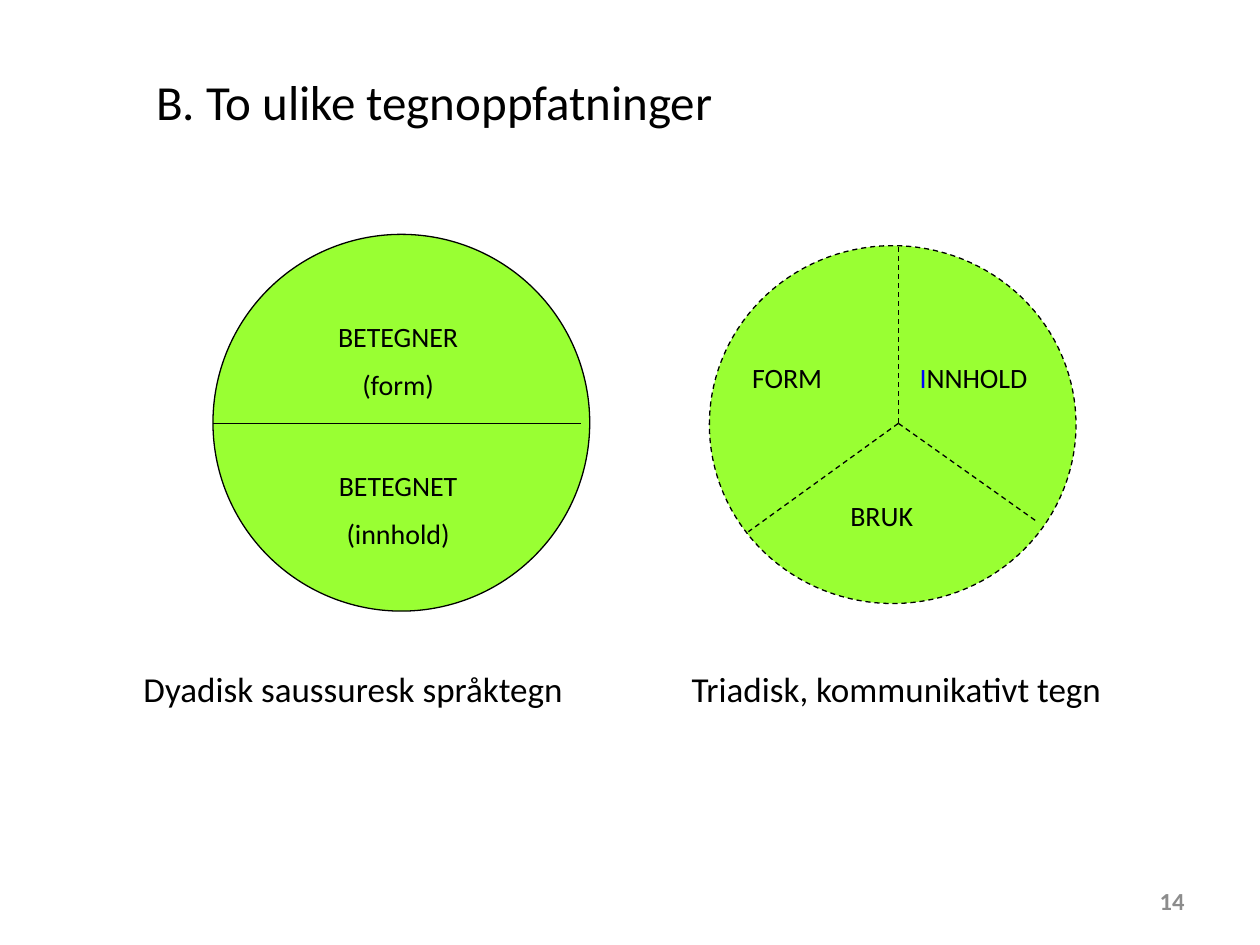
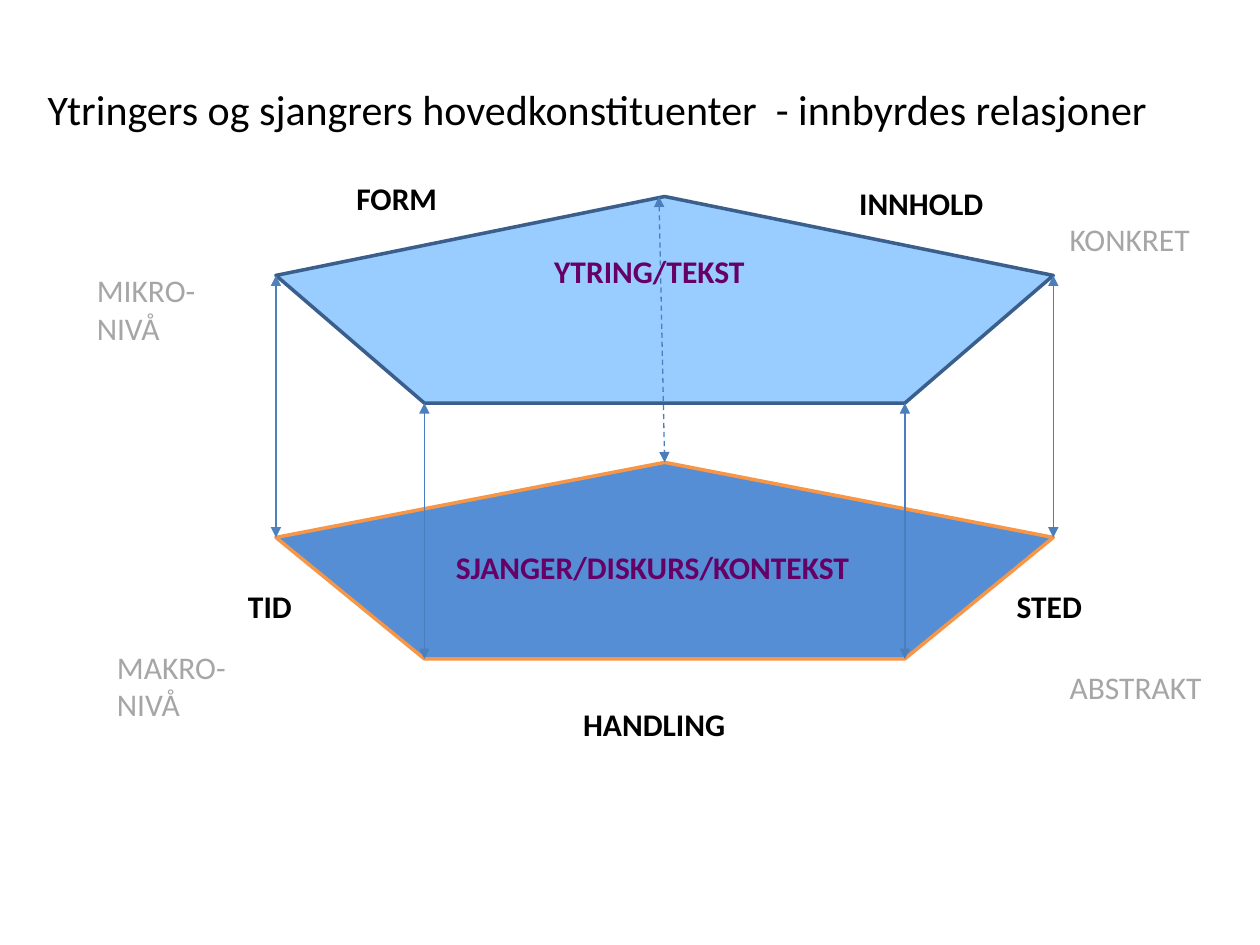
from lxml.etree import SubElement
from pptx import Presentation
from pptx.dml.color import RGBColor
from pptx.enum.dml import MSO_LINE_DASH_STYLE as DASH
from pptx.enum.shapes import MSO_CONNECTOR, MSO_SHAPE
from pptx.enum.text import MSO_ANCHOR, PP_ALIGN
from pptx.oxml.ns import qn
from pptx.util import Inches, Pt

FONT = "Calibri"
BLACK = RGBColor(0x00, 0x00, 0x00)
LIME = RGBColor(0x99, 0xFF, 0x33)
BLUE = RGBColor(0x00, 0x00, 0xFF)
PAGE_GREY = RGBColor(0x8C, 0x8C, 0x8C)
LEVEL_GREY = RGBColor(0xA6, 0xA6, 0xA6)
PURPLE = RGBColor(0x66, 0x00, 0x66)
SKY = RGBColor(0x99, 0xCC, 0xFF)
NAVY = RGBColor(0x3A, 0x5F, 0x8C)
MID_BLUE = RGBColor(0x55, 0x8E, 0xD5)
ORANGE = RGBColor(0xF7, 0x96, 0x46)
ARROW = RGBColor(0x4B, 0x7E, 0xBC)
ARROW_LEFT = RGBColor(0x4F, 0x81, 0xBD)

# Slide 1: two sign models (boxes are left, top, width, height)
SIGN_TITLE = ("B. To ulike tegnoppfatninger", (1.14, 0.52, 7.56, 0.57), 28)
DYADIC = (1.69, 1.86, 2.99, 2.99)
TRIADIC = (5.63, 1.95, 2.91, 2.84)
DYADIC_DIVIDER = ((1.69, 3.36), (4.61, 3.36))
TRIADIC_HUB = (7.13, 3.36)
TRIADIC_RIM = [(7.13, 1.94), (5.94, 4.22), (8.23, 4.14)]
DYADIC_LABELS = [
    (["BETEGNER", "(form)"], (2.41, 2.49, 1.5, 0.77)),
    (["BETEGNET", "(innhold)"], (2.41, 3.67, 1.5, 0.77)),
]
TRIADIC_LABELS = [
    ([("FORM", BLACK)], (5.87, 2.81, 1.18, 0.37)),
    ([("I", BLUE), ("NNHOLD", BLACK)], (7.2, 2.81, 1.26, 0.37)),
    ([("BRUK", BLACK)], (6.65, 3.91, 1.02, 0.37)),
]
CAPTIONS = [
    ("Dyadisk saussuresk språktegn", (1.04, 5.25, 3.72, 0.44)),
    ("Triadisk, kommunikativt tegn", (5.39, 5.25, 4.02, 0.44)),
]
PAGE_NUMBER = ("14", (7.17, 6.95, 2.33, 0.4))

# Slide 2: utterance level above genre level
LEVELS_TITLE = ("Ytringers og sjangrers hovedkonstituenter  - innbyrdes relasjoner",
                (0.28, 0.61, 9.29, 0.51), 24)
UTTERANCE = (2.19, 1.56, 6.17, 1.64)
GENRE = (2.19, 3.67, 6.17, 1.56)
CONSTITUENTS = [
    ("FORM", (2.73, 1.37, 1.17, 0.4)),
    ("INNHOLD", (6.72, 1.41, 1.25, 0.4)),
    ("TID", (1.87, 4.61, 0.63, 0.4)),
    ("STED", (7.97, 4.61, 1.56, 0.4)),
    ("HANDLING", (4.53, 5.55, 1.64, 0.4)),
]
LEVEL_NAMES = [
    ("YTRING/TEKST", (4.3, 1.95, 2.27, 0.4)),
    ("SJANGER/DISKURS/KONTEKST", (3.52, 4.3, 3.36, 0.4)),
]
SCALES = [
    (["MIKRO-", "NIVÅ"], (0.67, 2.1, 1.34, 0.71)),
    (["MAKRO-NIVÅ"], (0.83, 5.09, 1.1, 0.71)),
    (["KONKRET"], (8.39, 1.7, 1.42, 0.4)),
    (["ABSTRAKT"], (8.39, 5.25, 1.42, 0.4)),
]


def inches(values):
    return [Inches(v) for v in values]


def add_text(s, paragraphs, box, size, color=BLACK, bold=False,
             align=PP_ALIGN.LEFT, gap=0, anchor=MSO_ANCHOR.TOP):
    """Each paragraph is a string or a list of (text, colour) runs."""
    tf = s.shapes.add_textbox(*inches(box)).text_frame
    tf.word_wrap = True
    tf.vertical_anchor = anchor
    for i, runs in enumerate(paragraphs):
        p = tf.add_paragraph() if i else tf.paragraphs[0]
        p.alignment = align
        if i and gap:
            p.space_before = Pt(gap)
        if isinstance(runs, str):
            runs = [(runs, color)]
        for text, run_color in runs:
            r = p.add_run()
            r.text = text
            r.font.name = FONT
            r.font.size = Pt(size)
            r.font.bold = bold
            r.font.color.rgb = run_color


def add_title(s, title):
    text, box, size = title
    add_text(s, [text], box, size)


def style_line(line, color, width, dashed):
    line.color.rgb = color
    line.width = Pt(width)
    if dashed:
        line.dash_style = DASH.DASH


def add_figure(s, preset, box, fill, line, width=0.75, dashed=False):
    sp = s.shapes.add_shape(preset, *inches(box))
    sp.shadow.inherit = False
    sp.fill.solid()
    sp.fill.fore_color.rgb = fill
    style_line(sp.line, line, width, dashed)


def add_line(s, start, end, color=BLACK, dashed=False, arrows=False):
    cx = s.shapes.add_connector(MSO_CONNECTOR.STRAIGHT, *inches(start + end))
    style_line(cx.line, color, 0.75, dashed)
    props = cx._element.spPr
    if arrows:
        ln = props.find(qn("a:ln"))
        for tag in ("a:headEnd", "a:tailEnd"):
            SubElement(ln, qn(tag), type="triangle")
    SubElement(props, qn("a:effectLst"))


def pentagon_corners(box):
    left, top, width, height = box
    shares = {"top": (0.5, 0), "left": (0, 0.382), "right": (1, 0.382),
              "bottom left": (0.191, 1), "bottom right": (0.809, 1)}
    return {name: (left + x * width, top + y * height)
            for name, (x, y) in shares.items()}


def build_signs(s):
    # Circles and their dividers
    add_figure(s, MSO_SHAPE.OVAL, DYADIC, LIME, BLACK)
    add_figure(s, MSO_SHAPE.OVAL, TRIADIC, LIME, BLACK, dashed=True)
    add_line(s, *DYADIC_DIVIDER)
    for rim in TRIADIC_RIM:
        add_line(s, TRIADIC_HUB, rim, dashed=True)

    # Labels, captions, title and page number
    for lines, box in DYADIC_LABELS:
        add_text(s, lines, box, 16, align=PP_ALIGN.CENTER, gap=8)
    for runs, box in TRIADIC_LABELS:
        add_text(s, [runs], box, 16)
    for text, box in CAPTIONS:
        add_text(s, [text], box, 20)
    add_title(s, SIGN_TITLE)
    number, box = PAGE_NUMBER
    add_text(s, [number], box, 14, PAGE_GREY, bold=True,
             align=PP_ALIGN.RIGHT, anchor=MSO_ANCHOR.MIDDLE)


def build_levels(s):
    # The two levels
    add_figure(s, MSO_SHAPE.REGULAR_PENTAGON, UTTERANCE, SKY, NAVY, 2)
    add_figure(s, MSO_SHAPE.REGULAR_PENTAGON, GENRE, MID_BLUE, ORANGE, 2)

    # Arrows between matching corners; the rear one is dashed and leans a little
    upper, lower = pentagon_corners(UTTERANCE), pentagon_corners(GENRE)
    upper["top"] = (5.23, 1.56)
    for corner in ("right", "top", "bottom right", "bottom left", "left"):
        color = ARROW_LEFT if corner == "left" else ARROW
        add_line(s, upper[corner], lower[corner], color,
                 dashed=corner == "top", arrows=True)

    # Labels and title
    for labels, color in ((CONSTITUENTS, BLACK), (LEVEL_NAMES, PURPLE)):
        for text, box in labels:
            add_text(s, [text], box, 18, color, bold=True)
    add_title(s, LEVELS_TITLE)
    for lines, box in SCALES:
        add_text(s, lines, box, 18, LEVEL_GREY)


def main():
    prs = Presentation()
    prs.slide_width, prs.slide_height = Inches(10), Inches(7.5)
    for build in (build_signs, build_levels):
        build(prs.slides.add_slide(prs.slide_layouts[6]))
    prs.save("out.pptx")


if __name__ == "__main__":
    main()
